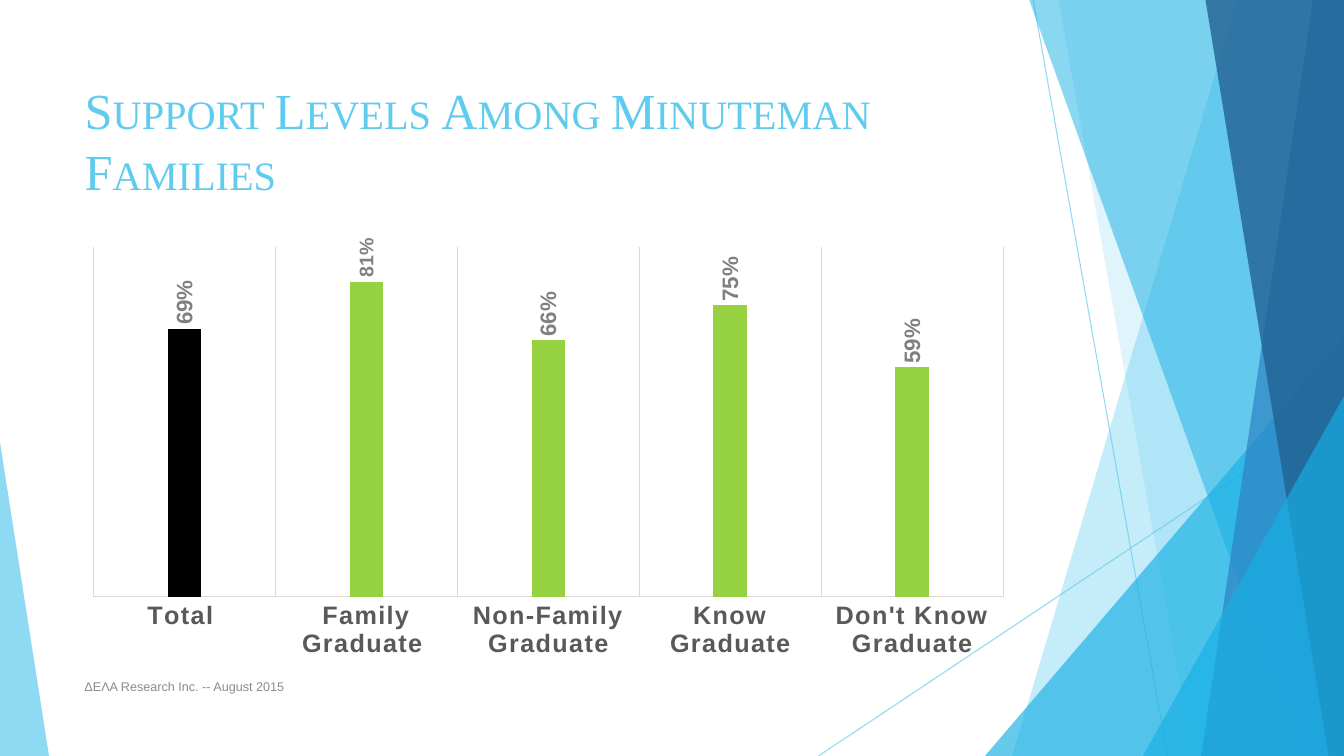
"""Build a slide with a column chart of support levels among families."""
from pptx import Presentation
from pptx.chart.data import CategoryChartData
from pptx.dml.color import RGBColor
from pptx.enum.chart import XL_CHART_TYPE as Kind, XL_LABEL_POSITION as Spot, XL_TICK_MARK as Tick
from pptx.enum.shapes import MSO_CONNECTOR as Link, MSO_SHAPE as Form
from pptx.enum.text import MSO_ANCHOR as Anchor, PP_ALIGN as Align
from pptx.oxml import parse_xml
from pptx.oxml.ns import nsdecls, qn
from pptx.util import Pt

SKY = RGBColor(0x5F, 0xCB, 0xEF)
CYAN = RGBColor(0x17, 0xB0, 0xE4)
BLUE = RGBColor(0x2E, 0x83, 0xC3)
NAVY = RGBColor(0x22, 0x62, 0x92)
GREEN = RGBColor(0x96, 0xD1, 0x41)
BLACK = RGBColor(0, 0, 0)
DARK = RGBColor(0x59, 0x59, 0x59)
GREY = RGBColor(0x80, 0x80, 0x80)
PALE = RGBColor(0x8C, 0x8C, 0x8C)
RULE = RGBColor(0xD9, 0xD9, 0xD9)
WIDE, HIGH, TOP = 960, 540, -0.6
LEFT, SPAN = 53.3, 676.8


class Deck:
    def __init__(self):
        self.prs = Presentation()
        self.prs.slide_width, self.prs.slide_height = Pt(WIDE), Pt(HIGH)
        self.slide = self.prs.slides.add_slide(self.prs.slide_layouts[5])
        self.shapes = self.slide.shapes

    def fade(self, fill, alpha):
        color = fill._xPr.find(".//" + qn("a:srgbClr"))
        color.append(parse_xml(f'<a:alpha {nsdecls("a")} val="{alpha * 1000}"/>'))

    def paint(self, shape, color, alpha):
        shape.shadow.inherit = False
        shape.fill.solid()
        shape.fill.fore_color.rgb = color
        self.fade(shape.fill, alpha)
        shape.line.fill.background()

    def style(self, font, size, color, face="Arial", bold=None):
        font.size, font.name, font.bold = Pt(size), face, bold
        font.color.rgb = color

    def line(self, *ends):
        rule = self.shapes.add_connector(Link.STRAIGHT, *map(Pt, ends))
        rule.line.width = Pt(0.75)
        rule.line.color.rgb = SKY
        self.fade(rule.line.fill, 70)
        rule._element.spPr.append(parse_xml(f'<a:effectLst {nsdecls("a")}/>'))

    def band(self, top, foot, color, alpha):
        pen = self.shapes.build_freeform(Pt(top), Pt(TOP))
        corners = [(WIDE, TOP), (WIDE, HIGH), (foot, HIGH)]
        pen.add_line_segments([(Pt(x), Pt(y)) for x, y in corners])
        self.paint(pen.convert_to_shape(), color, alpha)

    def wedge(self, left, top, width, tip, color, alpha):
        box = map(Pt, (left, top, width, HIGH - top))
        shape = self.shapes.add_shape(Form.ISOSCELES_TRIANGLE, *box)
        shape.adjustments[0] = tip
        self.paint(shape, color, alpha)

    def title(self, text, top, height):
        head = self.shapes.title
        head.left, head.top, head.width, head.height = map(Pt, (LEFT, top, SPAN, height))
        head.text_frame.text = text
        head.text_frame.vertical_anchor = Anchor.MIDDLE
        para = head.text_frame.paragraphs[0]
        para.alignment = Align.LEFT
        self.style(para.font, 36, SKY, "Times New Roman")
        para.font._rPr.set("cap", "small")
        self.shapes._spTree.append(head._element)

    def note(self, text, top, width, height):
        frame = self.shapes.add_textbox(*map(Pt, (LEFT, top, width, height))).text_frame
        frame.word_wrap = True
        frame.vertical_anchor = Anchor.MIDDLE
        frame.text = text
        self.style(frame.paragraphs[0].font, 9, PALE)

    def chart(self, rows, top, height):
        data = CategoryChartData(number_format="0%")
        data.categories = list(rows)
        data.add_series("Series 1", rows.values())
        box = map(Pt, (LEFT, top, SPAN, height))
        chart = self.shapes.add_chart(Kind.COLUMN_CLUSTERED, *box, data).chart
        chart.has_title = chart.has_legend = False
        self.style(chart.font, 10, BLACK)
        self.axes(chart)
        plot = chart.plots[0]
        plot.gap_width, plot.overlap, plot.vary_by_categories = 444, -90, False
        bars = plot.series[0]
        for part, color in ((bars, GREEN), (bars.points[0], BLACK)):
            part.format.fill.solid()
            part.format.fill.fore_color.rgb = color
        self.labels(bars)
        area = chart._chartSpace.chart.plotArea
        for old in area.findall(qn("c:layout")):
            area.remove(old)
        sides = {"xMode": "edge", "yMode": "edge", "x": 0.02, "y": 0.02, "w": 0.96, "h": 0.82}
        spots = "".join(f'<c:{key} val="{val}"/>' for key, val in sides.items())
        area.insert(0, parse_xml(
            f'<c:layout {nsdecls("c")}><c:manualLayout><c:layoutTarget val="inner"/>'
            f'{spots}</c:manualLayout></c:layout>'))

    def axes(self, chart):
        cat, val = chart.category_axis, chart.value_axis
        val.minimum_scale, val.maximum_scale = 0, 0.9
        val.has_major_gridlines = val.visible = False
        cat.has_major_gridlines = True
        cat.major_tick_mark = cat.minor_tick_mark = Tick.NONE
        for part in (cat, cat.major_gridlines):
            part.format.line.color.rgb = RULE
            part.format.line.width = Pt(0.75)
        font = cat.tick_labels.font
        self.style(font, 18, DARK, bold=True)
        font._rPr.set("spc", "100")

    def labels(self, bars):
        tags = bars.data_labels
        tags.show_value = True
        tags.number_format, tags.number_format_is_linked = "0%", False
        peak = bars.points[1].data_label
        for tag, size in ((tags, 16), (peak, 14)):
            self.style(tag.font, size, GREY, bold=True)
            tag.position = Spot.OUTSIDE_END
        for body in bars._element.iter(qn("a:bodyPr")):
            body.set("rot", "-5400000")
            body.set("vert", "horz")


def main():
    deck = Deck()
    deck.line(738, 0, 834, HIGH)
    deck.line(WIDE, 290, 584.6, HIGH)
    deck.band(884, 723, SKY, 36)
    deck.band(756, 852, SKY, 20)
    deck.wedge(703.5, 240, 256.5, 1, CYAN, 66)
    deck.band(735, 929.5, CYAN, 50)
    deck.band(938, 858, BLUE, 70)
    deck.band(861, 949, NAVY, 80)
    deck.wedge(816.5, 283, 143.5, 1, CYAN, 66)
    deck.wedge(0, 316, 35, 0, SKY, 70)
    deck.title("Support Levels Among Minuteman Families", 48.2, 103.7)
    deck.chart({
        "Total ": 0.69,
        "Family Graduate ": 0.81,
        "Non-Family Graduate": 0.66,
        "Know Graduate": 0.75,
        "Don't Know Graduate": 0.59,
    }, 170, 305.3)
    deck.note("ΔΕΛΑ Research Inc. -- August 2015", 476, 496, 28.8)
    deck.prs.save("out.pptx")


if __name__ == "__main__":
    main()
